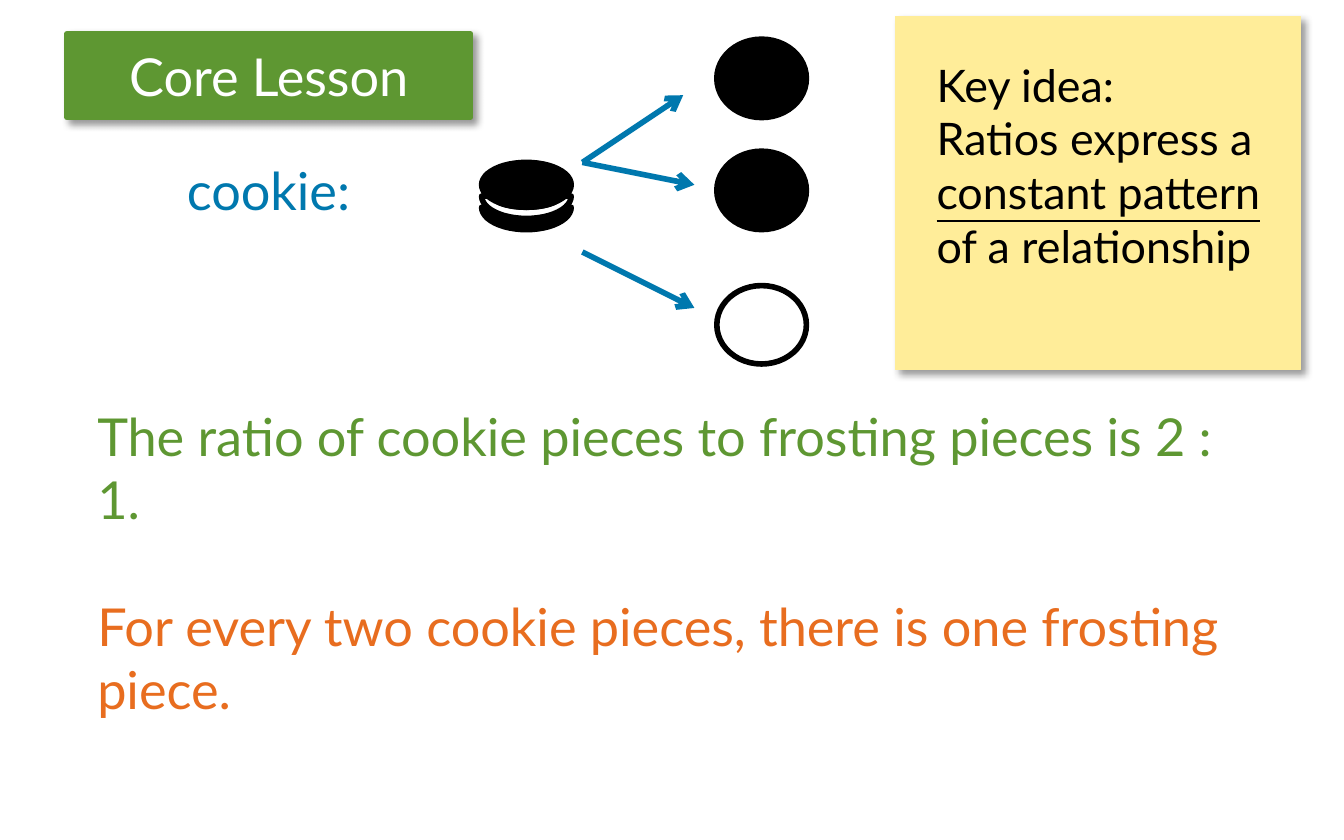
from lxml import etree
from pptx import Presentation
from pptx.dml.color import RGBColor
from pptx.enum.shapes import MSO_CONNECTOR, MSO_SHAPE
from pptx.enum.text import MSO_ANCHOR, PP_ALIGN
from pptx.oxml import parse_xml
from pptx.oxml.ns import nsdecls, qn
from pptx.util import Emu, Pt

PX = 9525  # EMU per px, 96 px to the inch
FONT = "Lato"
BLACK, WHITE = "000000", "FFFFFF"
GREEN, YELLOW, BLUE, ORANGE = "5E9732", "FFED99", "0078AE", "E86D1F"

# Content: boxes are left, top, width, height in px
TITLE = ("Core Lesson", (48, 24, 288, 60))
KEY_IDEA_BOX = (640, 12, 289, 252)
KEY_IDEA = [
    [("Key idea:", False)],
    [("Ratios express a ", False), ("constant pattern ", True), ("of a relationship", False)],
]
STATEMENTS = [
    ("cookie:", BLUE, (124, 108, 188, 72)),
    ("The ratio of cookie pieces to frosting pieces is 2 : 1.", GREEN, (60, 284, 852, 120)),
    ("For every two cookie pieces, there is one frosting piece.", ORANGE, (60, 420, 852, 72)),
]
COOKIE_LEFT, COOKIE_WIDTH, LAYER_HEIGHT = 344, 64, 32
COOKIE_LAYERS = [  # bottom to top
    (MSO_SHAPE.BLOCK_ARC, 132, 180, BLACK),
    (MSO_SHAPE.BLOCK_ARC, 124, 180, WHITE),
    (MSO_SHAPE.OVAL, 116, 0, BLACK),
]
PIECE_LEFT, PIECE_HEIGHT = 512, 56
PIECES = [(28, BLACK), (108, BLACK), (204, None)]
ARROWS = [(416, 116, 488, 68), (416, 116, 496, 132), (416, 180, 496, 220)]


def px(*lengths):
    return [Emu(length * PX) for length in lengths]


def color(hex_code):
    return RGBColor.from_string(hex_code)


def add_shape(kind, box, fill, line, width=3):
    shape = slide.shapes.add_shape(kind, *px(*box))
    shape.shadow.inherit = False
    if fill:
        shape.fill.solid()
        shape.fill.fore_color.rgb = color(fill)
    else:
        shape.fill.background()
    shape.line.color.rgb = color(line)
    shape.line.width = Pt(width)
    return shape


def drop_shadow(shape):
    effects = shape._element.spPr.find(qn("a:effectLst"))
    effects.append(parse_xml(
        f'<a:outerShdw {nsdecls("a")} blurRad="{Pt(4)}" dist="{Pt(3)}" dir="2700000" '
        'algn="tl" rotWithShape="0"><a:srgbClr val="000000"><a:alpha val="40000"/>'
        '</a:srgbClr></a:outerShdw>'))


def style(run, size, hex_code):
    run.font.name = FONT
    run.font.size = Pt(size)
    run.font.color.rgb = color(hex_code)


prs = Presentation()
prs.slide_width, prs.slide_height = px(960, 600)
slide = prs.slides.add_slide(prs.slide_layouts[6])

# Title banner
title_text, title_box = TITLE
title = add_shape(MSO_SHAPE.RECTANGLE, title_box, GREEN, GREEN)
drop_shadow(title)
title.text_frame.text = title_text
title.text_frame.vertical_anchor = MSO_ANCHOR.MIDDLE
title.text_frame.paragraphs[0].alignment = PP_ALIGN.CENTER
style(title.text_frame.paragraphs[0].runs[0], 28, WHITE)

# Key idea note
note = add_shape(MSO_SHAPE.RECTANGLE, KEY_IDEA_BOX, YELLOW, YELLOW, 0.5)
drop_shadow(note)
note_frame = note.text_frame
note_frame.word_wrap = True
note_frame.vertical_anchor = MSO_ANCHOR.TOP
note_frame.margin_left = note_frame.margin_top = Emu(29 * PX)
for index, parts in enumerate(KEY_IDEA):
    paragraph = note_frame.add_paragraph() if index else note_frame.paragraphs[0]
    paragraph.alignment = PP_ALIGN.LEFT
    for words, underlined in parts:
        run = paragraph.add_run()
        run.text = words
        style(run, 24, BLACK)
        run.font.underline = underlined

# Cookie label and ratio statements
for words, hue, box in STATEMENTS:
    statement = slide.shapes.add_textbox(*px(*box)).text_frame
    statement.word_wrap = True
    statement.text = words
    style(statement.paragraphs[0].runs[0], 28, hue)

# Whole cookie
for kind, top, rotation, fill in COOKIE_LAYERS:
    layer = add_shape(kind, (COOKIE_LEFT, top, COOKIE_WIDTH, LAYER_HEIGHT), fill, BLACK)
    layer.rotation = rotation

# Two cookie pieces and one frosting piece
for top, fill in PIECES:
    add_shape(MSO_SHAPE.OVAL, (PIECE_LEFT, top, COOKIE_WIDTH, PIECE_HEIGHT), fill, BLACK)

# Arrows from the cookie to its pieces
for ends in ARROWS:
    arrow = slide.shapes.add_connector(MSO_CONNECTOR.STRAIGHT, *px(*ends))
    arrow.line.color.rgb = color(BLUE)
    arrow.line.width = Pt(3)
    etree.SubElement(arrow.line._get_or_add_ln(), qn("a:tailEnd"), type="arrow")
    etree.SubElement(arrow._element.spPr, qn("a:effectLst"))

prs.save("out.pptx")
